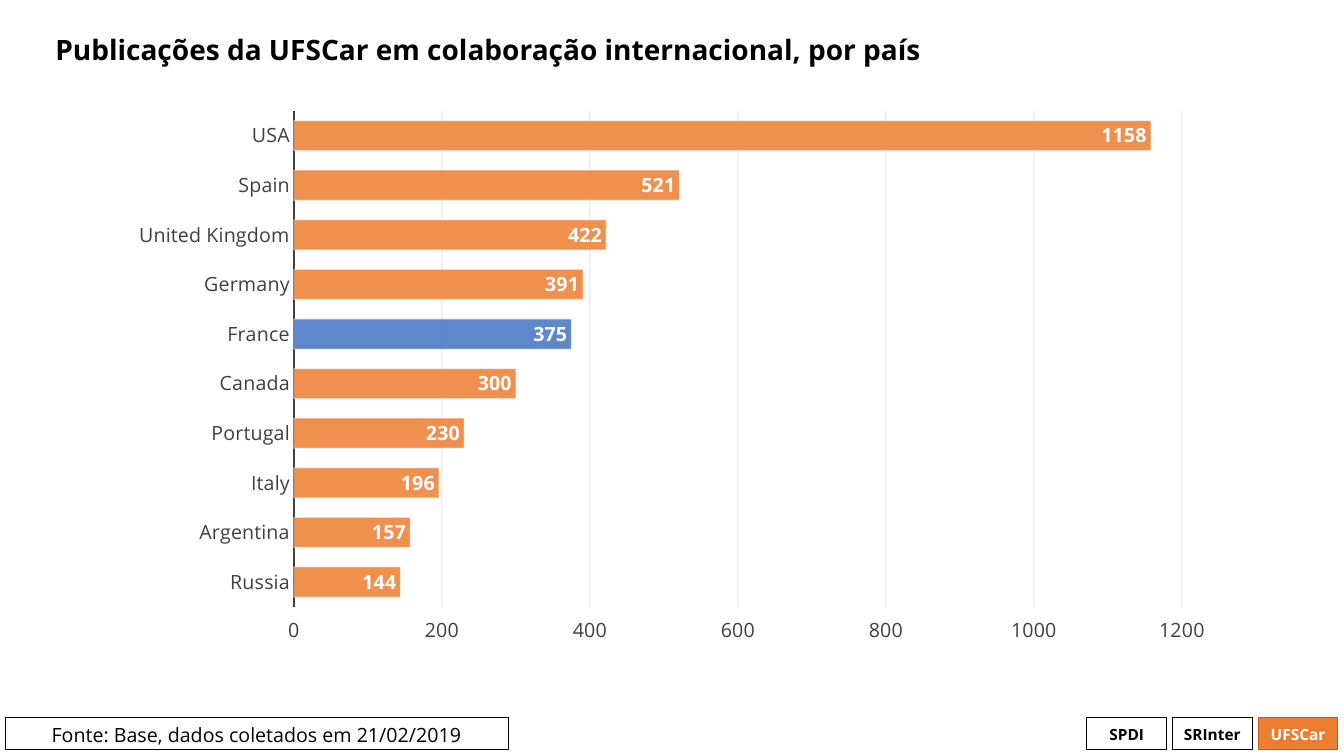
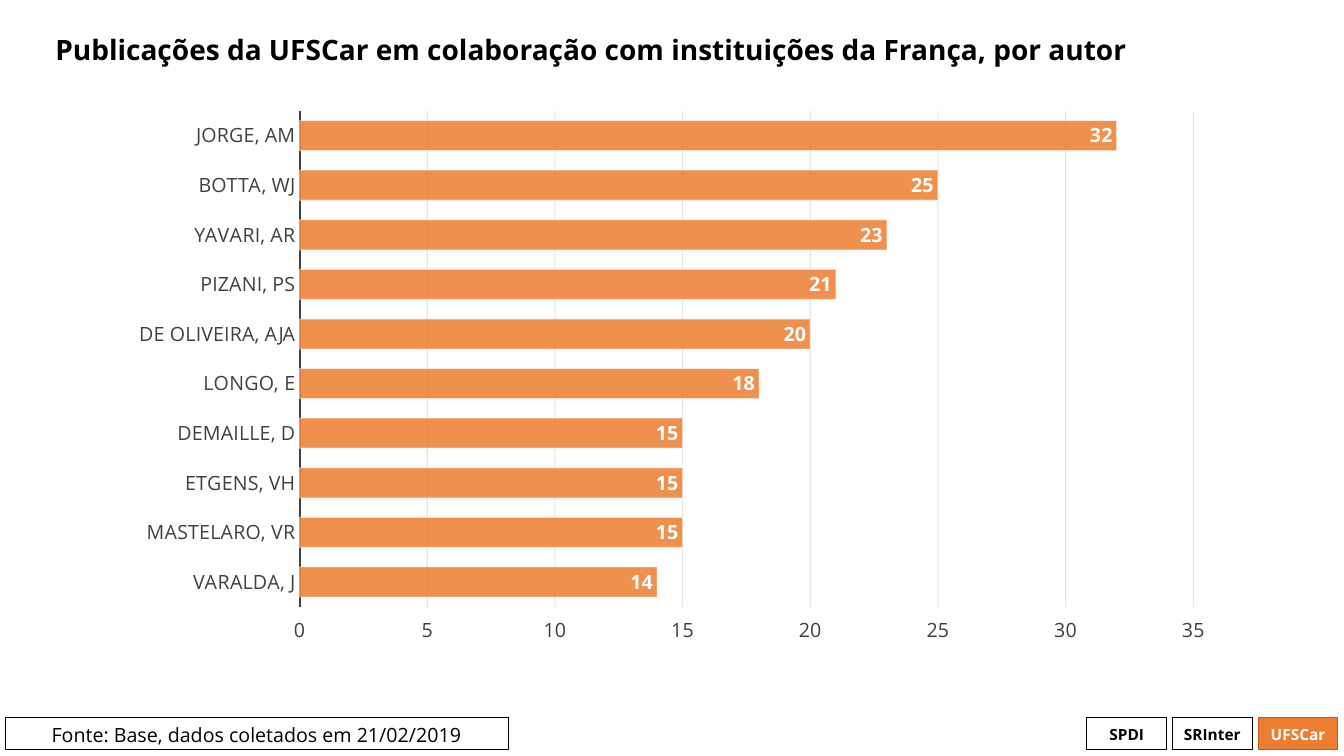
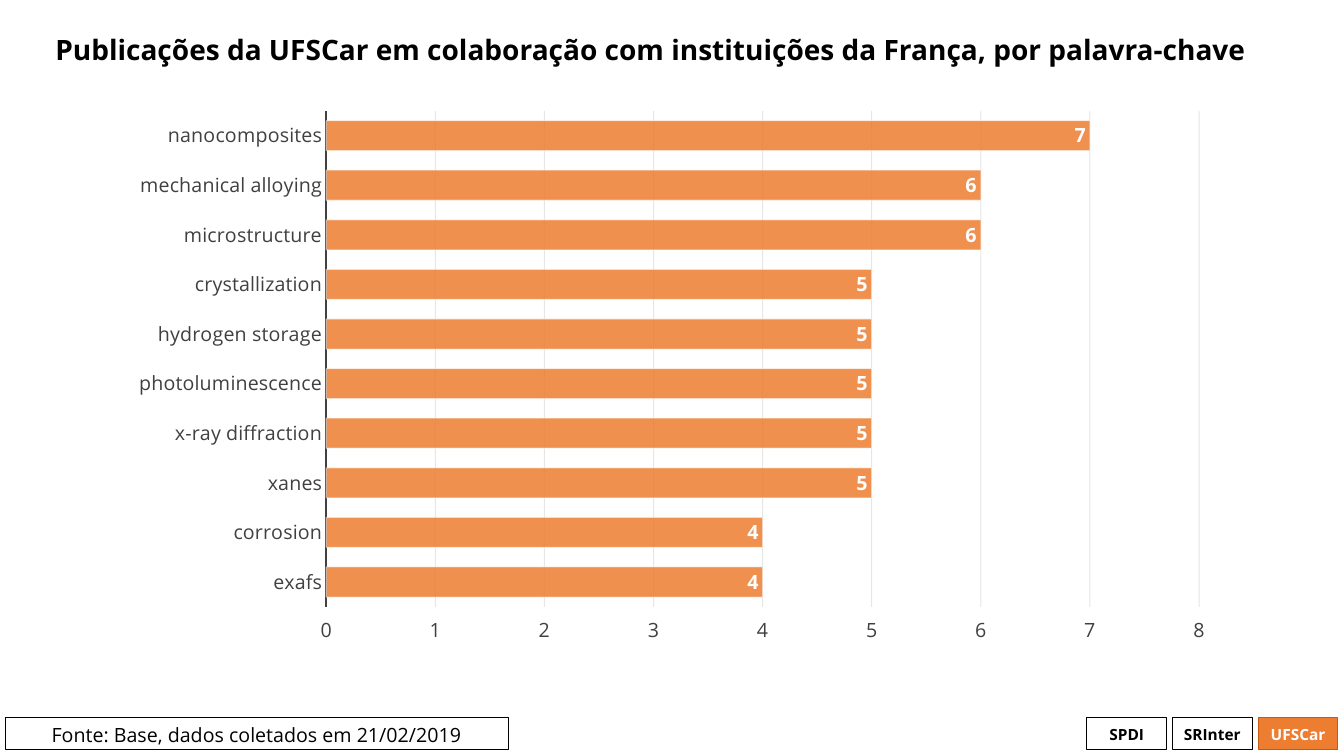
from lxml import etree
from pptx import Presentation
from pptx.chart.data import CategoryChartData
from pptx.dml.color import RGBColor
from pptx.enum import chart as charts, shapes, text
from pptx.oxml.ns import qn
from pptx.util import Inches, Pt

BLACK = RGBColor(0x00, 0x00, 0x00)
WHITE = RGBColor(0xFF, 0xFF, 0xFF)
ORANGE = RGBColor(0xED, 0x7D, 0x31)
DARK_ORANGE = RGBColor(0xC5, 0x5A, 0x11)
BLUE = RGBColor(0x44, 0x72, 0xC4)
GRAY = RGBColor(0x40, 0x40, 0x40)
GRID = RGBColor(0x0D, 0x0D, 0x0D)

SOURCE = "Fonte: Base, dados coletados em 21/02/2019"
# Words, fill, outline, text colour
BADGES = [
    ("SPDI", None, BLACK, BLACK),
    ("SRInter", None, BLACK, BLACK),
    ("UFSCar", ORANGE, DARK_ORANGE, WHITE),
]

# Title, axis maximum, axis step, highlighted category, values
RANKINGS = [
    ("Publicações da UFSCar em colaboração internacional, por país",
     1200, 200, "France",
     {"USA": 1158, "Spain": 521, "United Kingdom": 422, "Germany": 391,
      "France": 375, "Canada": 300, "Portugal": 230, "Italy": 196,
      "Argentina": 157, "Russia": 144}),
    ("Publicações da UFSCar em colaboração com instituições da França, por autor",
     35, 5, None,
     {"JORGE, AM": 32, "BOTTA, WJ": 25, "YAVARI, AR": 23, "PIZANI, PS": 21,
      "DE OLIVEIRA, AJA": 20, "LONGO, E": 18, "DEMAILLE, D": 15,
      "ETGENS, VH": 15, "MASTELARO, VR": 15, "VARALDA, J": 14}),
    ("Publicações da UFSCar em colaboração com instituições da França, por palavra-chave",
     8, 1, None,
     {"nanocomposites": 7, "mechanical alloying": 6, "microstructure": 6,
      "crystallization": 5, "hydrogen storage": 5, "photoluminescence": 5,
      "x-ray diffraction": 5, "xanes": 5, "corrosion": 4, "exafs": 4}),
]


class Deck:
    """Shared style and the slide being built."""

    FONT = "Open Sans"
    FOOTER_TOP, FOOTER_HEIGHT = 7.12, 0.32
    BADGE_LEFT, BADGE_WIDTH, BADGE_STEP = 10.78, 0.79, 0.85
    # Opacity in percent of grid lines, bar fills and bar outlines
    OPACITY = {
        "//c:majorGridlines//a:srgbClr": 10,
        "//c:ser//c:spPr/a:solidFill/a:srgbClr": 85,
        "//c:ser//c:spPr/a:ln//a:srgbClr": 50,
    }

    def __init__(self):
        self.presentation = Presentation()
        self.presentation.slide_width = Inches(13.33)
        self.presentation.slide_height = Inches(7.5)
        self.slide = None

    def add_slide(self, title):
        layout = self.presentation.slide_layouts[6]
        self.slide = self.presentation.slides.add_slide(layout)
        self.footer()
        self.title(title)

    def style_font(self, font, size, color, bold=False):
        font.name, font.size, font.bold = self.FONT, Pt(size), bold
        font.color.rgb = color

    def style_line(self, line, color, width=0.75):
        line.color.rgb = color
        line.width = Pt(width)

    def title(self, words):
        box = self.slide.shapes.add_textbox(
            Inches(0.45), Inches(0.06), Inches(12.41), Inches(0.91))
        frame = box.text_frame
        frame.word_wrap = True
        frame.vertical_anchor = text.MSO_ANCHOR.MIDDLE
        paragraph = frame.paragraphs[0]
        paragraph.text = words
        paragraph.line_spacing = 0.9
        self.style_font(paragraph.font, 20, BLACK, bold=True)

    def footer_box(self, left, width, words, size, fill=None, line=BLACK,
                   color=BLACK, bold=False, anchor=text.MSO_ANCHOR.MIDDLE):
        shape = self.slide.shapes.add_shape(
            shapes.MSO_SHAPE.RECTANGLE, Inches(left), Inches(self.FOOTER_TOP),
            Inches(width), Inches(self.FOOTER_HEIGHT))
        shape.shadow.inherit = False
        if fill is None:
            shape.fill.background()
        else:
            shape.fill.solid()
            shape.fill.fore_color.rgb = fill
        self.style_line(shape.line, line)
        frame = shape.text_frame
        frame.word_wrap = False
        frame.vertical_anchor = anchor
        paragraph = frame.paragraphs[0]
        paragraph.text = words
        paragraph.alignment = text.PP_ALIGN.CENTER
        self.style_font(paragraph.font, size, color, bold)

    def footer(self):
        for index, (words, fill, line, color) in enumerate(BADGES):
            self.footer_box(self.BADGE_LEFT + index * self.BADGE_STEP,
                            self.BADGE_WIDTH, words, 11, fill, line, color,
                            bold=True)
        self.footer_box(0.05, 4.99, SOURCE, 14, anchor=text.MSO_ANCHOR.TOP)

    def paint_bar(self, bar_format, color):
        bar_format.fill.solid()
        bar_format.fill.fore_color.rgb = color
        self.style_line(bar_format.line, WHITE)

    def bar_chart(self, values, maximum, step, highlight=None):
        data = CategoryChartData()
        data.categories = list(values)
        data.add_series("Series 1", list(values.values()))
        chart = self.slide.shapes.add_chart(
            charts.XL_CHART_TYPE.BAR_CLUSTERED, Inches(1.16), Inches(0.99),
            Inches(11.01), Inches(5.51), data).chart
        chart.has_legend = chart.has_title = False
        self.style_font(chart.font, 14, BLACK)

        # Axes: first category on top, value labels at the bottom
        category_axis, value_axis = chart.category_axis, chart.value_axis
        for axis in (category_axis, value_axis):
            axis.major_tick_mark = axis.minor_tick_mark = charts.XL_TICK_MARK.NONE
            self.style_font(axis.tick_labels.font, 14, GRAY)
        category_axis.reverse_order = True
        self.style_line(category_axis.format.line, GRAY, 1.5)
        value_axis.tick_label_position = charts.XL_TICK_LABEL_POSITION.HIGH
        value_axis.minimum_scale, value_axis.maximum_scale = 0, maximum
        value_axis.major_unit = step
        value_axis.format.line.fill.background()
        value_axis.has_major_gridlines = True
        self.style_line(value_axis.major_gridlines.format.line, GRID)

        # Bars
        plot = chart.plots[0]
        plot.gap_width = 65
        plot.vary_by_categories = False
        series = plot.series[0]
        series.invert_if_negative = False
        self.paint_bar(series.format, ORANGE)
        if highlight:
            point = series.points[list(values).index(highlight)]
            self.paint_bar(point.format, BLUE)

        # Labels
        labels = series.data_labels
        labels.show_value = True
        labels.position = charts.XL_LABEL_POSITION.INSIDE_END
        self.style_font(labels.font, 14, WHITE, bold=True)

        # Opacity
        for pattern, percent in self.OPACITY.items():
            for color in chart.element.xpath(pattern):
                etree.SubElement(color, qn("a:alpha"), val=str(percent * 1000))


def main():
    deck = Deck()
    for title, maximum, step, highlight, values in RANKINGS:
        deck.add_slide(title)
        deck.bar_chart(values, maximum, step, highlight)
    deck.presentation.save("out.pptx")


if __name__ == "__main__":
    main()
